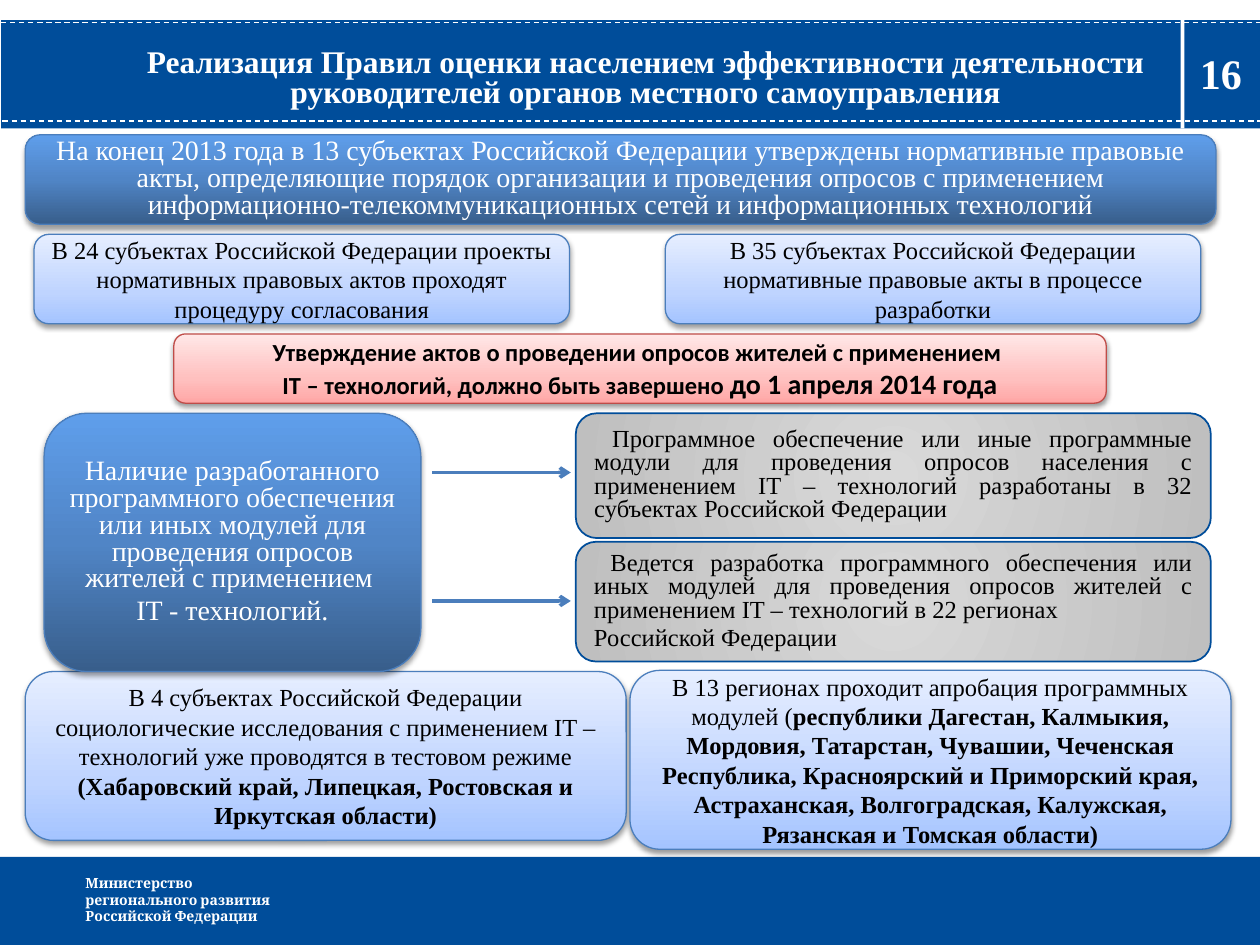
"""Build the slide on public opinion surveys of local government heads."""
from pptx import Presentation
from pptx.dml.color import RGBColor
from pptx.enum.dml import MSO_LINE
from pptx.enum.shapes import MSO_CONNECTOR, MSO_SHAPE
from pptx.enum.text import MSO_ANCHOR, MSO_AUTO_SIZE, PP_ALIGN
from pptx.oxml import parse_xml
from pptx.oxml.ns import nsdecls, qn
from pptx.util import Inches, Pt

RECTANGLE, ROUNDED = MSO_SHAPE.RECTANGLE, MSO_SHAPE.ROUNDED_RECTANGLE
CALLOUT = MSO_SHAPE.ROUNDED_RECTANGULAR_CALLOUT
LEFT, CENTER, JUSTIFY = PP_ALIGN.LEFT, PP_ALIGN.CENTER, PP_ALIGN.JUSTIFY
TOP, MIDDLE = MSO_ANCHOR.TOP, MSO_ANCHOR.MIDDLE
STRAIGHT, DASH = MSO_CONNECTOR.STRAIGHT, MSO_LINE.DASH
NAVY, WHITE, BLACK = "004D9A", "FFFFFF", "000000"
SERIF = "Times New Roman"

UPWARD = '<a:lin ang="16200000" scaled="0"/>'
RADIAL = ('<a:path path="circle"><a:fillToRect l="50000" t="50000" '
          'r="50000" b="50000"/></a:path>')
SHADOW = (f'<a:outerShdw {nsdecls("a")} blurRad="39370" dist="20320" dir="5400000" '
          'rotWithShape="0"><a:srgbClr val="000000"><a:alpha val="38000"/>'
          '</a:srgbClr></a:outerShdw>')

STYLES = {
    "blue": {"stops": [(0, "385E8B"), (50, "5085C6"), (100, "5F9EEB")],
             "direction": UPWARD, "line": "4B7EBC", "width": 0.75, "shadow": True,
             "text": {"size": 16, "color": WHITE, "spacing": 0.8}},
    "pale": {"stops": [(0, "A4C4FF"), (35, "BFD4FF"), (100, "E6EEFF")],
             "direction": UPWARD, "line": "4B7EBC", "width": 0.75, "shadow": True,
             "text": {"size": 14}},
    "gray": {"stops": [(0, "D9D9D9"), (100, "BFBFBF")],
             "direction": RADIAL, "line": NAVY, "width": 1, "shadow": False,
             "text": {"size": 14, "align": JUSTIFY, "spacing": 0.8}},
    "pink": {"stops": [(0, "FFA6A5"), (35, "FFC0BF"), (100, "FFE7E7")],
             "direction": UPWARD, "line": "BF4C48", "width": 0.75, "shadow": True,
             "text": {"size": 14, "font": "Calibri", "bold": True}},
}

CARDS = [
    ("blue", ROUNDED, (0.2, 1.07, 9.45, 0.71), [[
        ("На конец 2013 года в 13 субъектах Российской Федерации утверждены нормативные "
         "правовые акты, определяющие порядок организации и проведения опросов с применением "
         "информационно-телекоммуникационных сетей и информационных технологий", {})]]),
    ("pale", ROUNDED, (0.2, 5.33, 4.77, 1.34), [
        [("В 4 субъектах Российской Федерации социологические исследования с применением "
          "IT – технологий уже проводятся в тестовом режиме", {})],
        [("(Хабаровский край, Липецкая, Ростовская и Иркутская области)", {"bold": True})]]),
    ("pale", ROUNDED, (5, 5.32, 4.77, 1.42), [[
        ("В 13 регионах проходит апробация программных модулей (", {}),
        ("республики Дагестан, Калмыкия, Мордовия, Татарстан, Чувашии, Чеченская Республика, "
         "Красноярский и Приморский края, Астраханская, Волгоградская, Калужская, "
         "Рязанская и Томская области)", {"bold": True})]]),
    ("blue", ROUNDED, (0.35, 3.28, 2.99, 2.05), [
        [("Наличие разработанного программного обеспечения или иных модулей для проведения "
          "опросов жителей с применением ", {})],
        [("IT - технологий.", {})]]),
    ("gray", ROUNDED, (4.57, 3.28, 5.04, 0.99), [[
        (" Программное обеспечение или иные программные модули для проведения опросов "
         "населения с применением IT – технологий разработаны в 32 субъектах "
         "Российской Федерации", {})]]),
    ("pale", ROUNDED, (0.27, 1.86, 4.25, 0.71), [[
        ("В 24 субъектах Российской Федерации проекты нормативных правовых актов проходят "
         "процедуру согласования", {})]]),
    ("pale", ROUNDED, (5.28, 1.86, 4.25, 0.71), [[
        ("В 35 субъектах Российской Федерации нормативные правовые акты в процессе "
         "разработки", {})]]),
    ("gray", ROUNDED, (4.57, 4.3, 5.04, 0.95), [
        [(" Ведется разработка программного обеспечения или иных модулей для проведения "
          "опросов жителей с применением IT – технологий в 22 регионах ", {})],
        [("Российской Федерации", {})]]),
    ("pink", CALLOUT, (1.38, 2.65, 7.4, 0.55), [
        [("Утверждение актов о проведении опросов жителей с применением ", {})],
        [("IT – технологий, должно быть завершено ", {}),
         ("до 1 апреля 2014 года", {"size": Pt(16)})]]),
]


def write_text(shape, paragraphs, size, font=SERIF, color=BLACK, bold=False,
               align=CENTER, spacing=None, anchor=MIDDLE):
    """Fill a shape with paragraphs made of (text, font changes) runs."""
    frame = shape.text_frame
    frame.word_wrap = True
    frame.auto_size = MSO_AUTO_SIZE.NONE
    frame.vertical_anchor = anchor
    for index, runs in enumerate(paragraphs):
        paragraph = frame.add_paragraph() if index else frame.paragraphs[0]
        paragraph.alignment = align
        paragraph.line_spacing = spacing
        paragraph.space_before = Pt(size * 0.2 if index and spacing else 0)
        for text, changes in runs:
            run = paragraph.add_run()
            run.text = text
            run.font.color.rgb = RGBColor.from_string(color)
            formats = {"size": Pt(size), "name": font, "bold": bold, **changes}
            for name, value in formats.items():
                setattr(run.font, name, value)


def add_line(shapes, left, right, top, color, width):
    """Add a horizontal line without shadow and return it."""
    line = shapes.add_connector(STRAIGHT, Inches(left), Inches(top), Inches(right), Inches(top))
    line.line.color.rgb = RGBColor.from_string(color)
    line.line.width = Pt(width)
    line.element.spPr.append(parse_xml(f'<a:effectLst {nsdecls("a")}/>'))
    return line


presentation = Presentation()
presentation.slide_width, presentation.slide_height = Inches(10), Inches(7.5)
slide = presentation.slides.add_slide(presentation.slide_layouts[5])
shapes = slide.shapes

for color, box in [(NAVY, (0.01, 0.16, 9.99, 0.86)), (WHITE, (9.37, 0.15, 0.03, 0.87)),
                   (NAVY, (-0.01, 6.8, 10.02, 0.7))]:
    bar = shapes.add_shape(RECTANGLE, *map(Inches, box))
    bar.shadow.inherit = False
    bar.fill.solid()
    bar.fill.fore_color.rgb = RGBColor.from_string(color)
    bar.line.fill.background()

for left, top in [(0.02, 0.96), (0.01, 0.18)]:
    add_line(shapes, left, left + 9.99, top, WHITE, 0.75).line.dash_style = DASH

title = shapes.title
title.element.getparent().append(title.element)
title_box = {"left": 0.91, "top": 0.36, "width": 8.43, "height": 0.55}
for name, value in title_box.items():
    setattr(title, name, Inches(value))
margins = {"margin_left": 0.06, "margin_right": 0.06, "margin_top": 0.03, "margin_bottom": 0.03}
for name, value in margins.items():
    setattr(title.text_frame, name, Inches(value))
write_text(title, [[("Реализация Правил оценки населением эффективности деятельности "
                     "руководителей органов местного самоуправления", {})]],
           18, color=WHITE, bold=True, spacing=0.8, anchor=TOP)

page_number = shapes.add_textbox(Inches(9.38), Inches(0.33), Inches(0.62), Inches(0.5))
write_text(page_number, [[("16", {})]], 24, color=WHITE, bold=True, anchor=TOP)

ministry = shapes.add_textbox(Inches(0.58), Inches(6.89), Inches(2.55), Inches(0.5))
ministry_lines = ["Министерство", "регионального развития", "Российской Федерации"]
write_text(ministry, [[(line, {})] for line in ministry_lines], 8, font="Cambria",
           color=WHITE, bold=True, align=LEFT, anchor=TOP)

for style_name, kind, box, paragraphs in CARDS:
    style = STYLES[style_name]
    card = shapes.add_shape(kind, *map(Inches, box))
    card.shadow.inherit = False
    card.fill.solid()
    card.line.color.rgb = RGBColor.from_string(style["line"])
    card.line.width = Pt(style["width"])
    properties = card.element.spPr
    stops = "".join(f'<a:gs pos="{position * 1000}"><a:srgbClr val="{color}"/></a:gs>'
                    for position, color in style["stops"])
    gradient = parse_xml(f'<a:gradFill {nsdecls("a")} rotWithShape="1"><a:gsLst>{stops}'
                         f'</a:gsLst>{style["direction"]}</a:gradFill>')
    properties.replace(properties.find(qn("a:solidFill")), gradient)
    if style["shadow"]:
        properties.find(qn("a:effectLst")).append(parse_xml(SHADOW))
    if kind == CALLOUT:
        for index, value in enumerate([-0.5, 0.24, 0.17]):
            card.adjustments[index] = value
    write_text(card, paragraphs, **style["text"])

for top in (3.75, 4.77):
    arrow = add_line(shapes, 3.43, 4.53, top, "4B7EBC", 2)
    arrow.line.fill.solid()
    arrow.line.color.rgb = RGBColor.from_string("4B7EBC")
    arrow.element.spPr.find(qn("a:ln")).append(
        parse_xml(f'<a:tailEnd {nsdecls("a")} type="arrow"/>'))

presentation.save("out.pptx")
